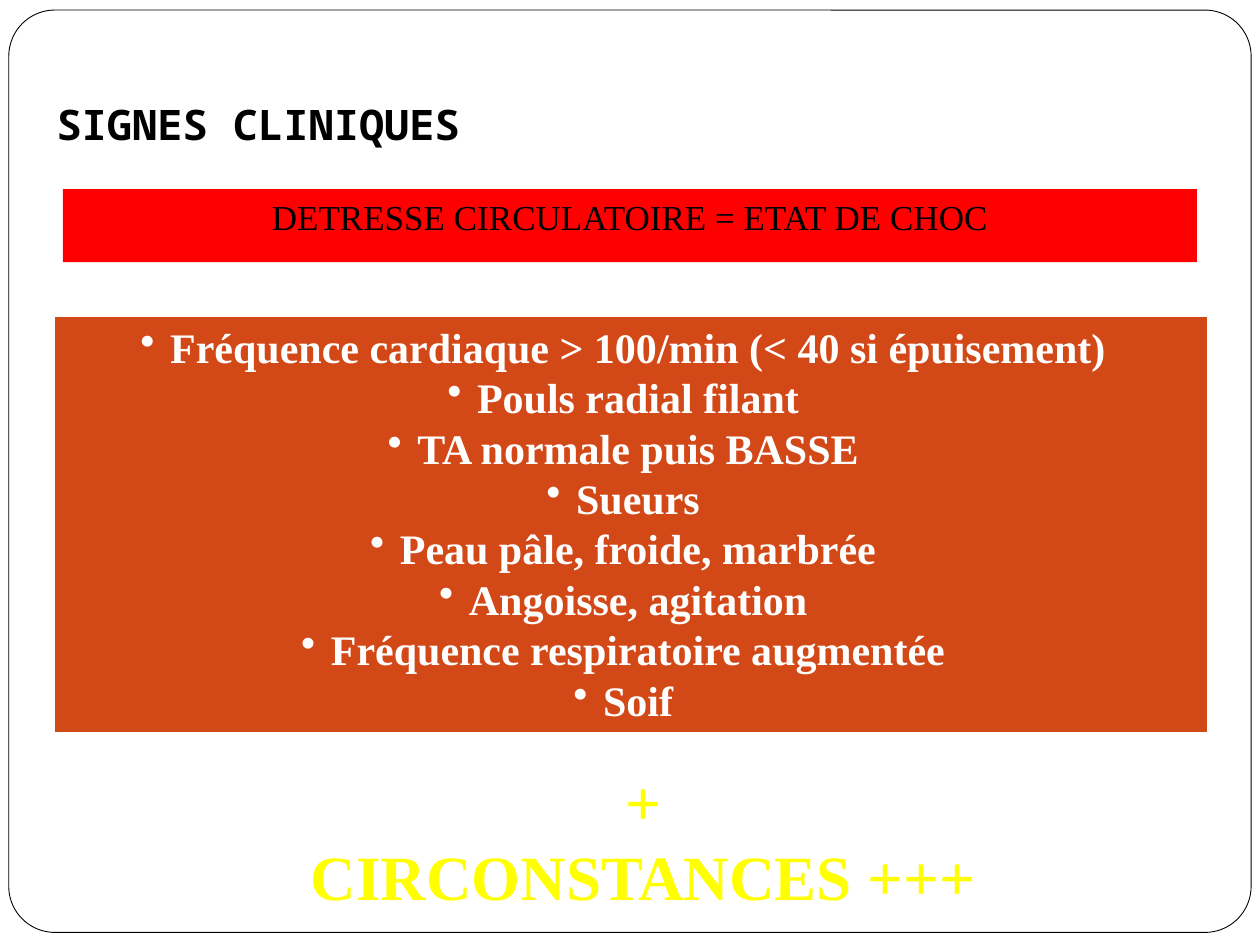
from pptx import Presentation
from pptx.dml.color import RGBColor
from pptx.enum.shapes import MSO_SHAPE
from pptx.enum.text import MSO_ANCHOR, PP_ALIGN
from pptx.util import Inches, Pt
from lxml.etree import SubElement
from pptx.oxml.ns import qn

WIDE, HIGH = 10, 7.5
SERIF, MONO = "Times New Roman", "Noto Sans Mono"
SIGNS = [
    "Fréquence cardiaque > 100/min (< 40 si épuisement)",
    "Pouls radial filant",
    "TA normale puis BASSE",
    "Sueurs",
    "Peau pâle, froide, marbrée",
    "Angoisse, agitation",
    "Fréquence respiratoire augmentée",
    "Soif",
]


def paint(target, code):
    """Give a fill, line or font colour its hex value."""
    if hasattr(target, "solid"):
        target.solid()
        target = target.fore_color
    else:
        target = target.color
    target.rgb = RGBColor.from_string(code)


def panel(slide, box, fill, line=None, width=0, kind=MSO_SHAPE.RECTANGLE):
    """Add a filled shape placed in inches."""
    shape = slide.shapes.add_shape(kind, *map(Inches, box))
    shape.shadow.inherit = False
    paint(shape.fill, fill)
    if line:
        paint(shape.line, line)
        shape.line.width = Pt(width)
    else:
        shape.line.fill.background()
    return shape


def write(shape, lines, size=24, color="000000", font=SERIF, bold=True,
          align=PP_ALIGN.CENTER, before=0, bullet=None, wrap=True):
    """Fill a shape with one paragraph per line."""
    frame = shape.text_frame
    frame.word_wrap = wrap
    frame.vertical_anchor = MSO_ANCHOR.TOP
    for i, line in enumerate(lines):
        para = frame.paragraphs[0] if i == 0 else frame.add_paragraph()
        para.alignment = align
        para.space_before = Pt(before)
        run = para.add_run()
        run.text = line
        run.font.name, run.font.size, run.font.bold = font, Pt(size), bold
        paint(run.font, color)
        if bullet:
            SubElement(para._p.get_or_add_pPr(), qn("a:buChar")).set("char", bullet)


def main():
    """Build and save the slide."""
    deck = Presentation()
    deck.slide_width, deck.slide_height = Inches(WIDE), Inches(HIGH)
    slide = deck.slides.add_slide(deck.slide_layouts[6])

    frame = panel(slide, (0.07, 0.08, WIDE - 0.14, 7.32), "FFFFFF", "000000", 0.5,
                  MSO_SHAPE.ROUNDED_RECTANGLE)
    frame.adjustments[0] = 0.05

    banner = panel(slide, (0.5, 1.5, WIDE - 1, 0.58), "FF0000")
    write(banner, ["DETRESSE CIRCULATOIRE = ETAT DE CHOC"], size=20, bold=False, before=5.8)

    close = slide.shapes.add_textbox(*map(Inches, (2.32, 6, 5.57, 1.3)))
    write(close, ["+", "CIRCONSTANCES +++"], size=36, color="FFFF00", wrap=False)

    signs = panel(slide, (0.42, 2.5, WIDE - 0.83, 3.32), "D34817", "FFFFFF", 2)
    write(signs, SIGNS, color="FFFFFF", bullet="•")

    title = panel(slide, (0.35, 0.73, 5.75, 0.5), "FFFFFF")
    write(title, ["SIGNES CLINIQUES"], font=MONO, align=PP_ALIGN.LEFT)

    deck.save("out.pptx")


if __name__ == "__main__":
    main()
